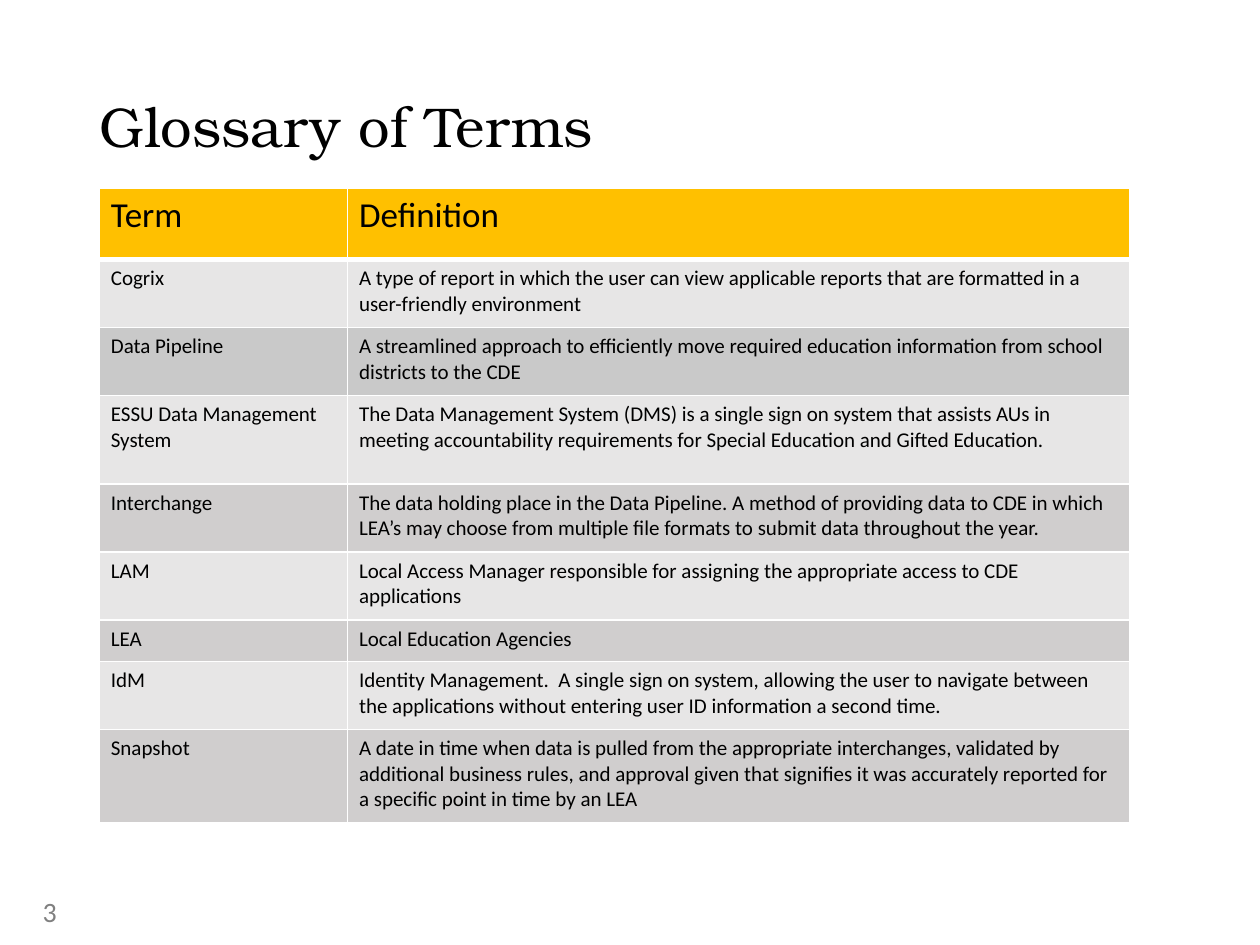
from lxml import etree
from pptx import Presentation
from pptx.dml.color import RGBColor
from pptx.enum import text
from pptx.oxml import ns
from pptx.util import Inches, Pt

BLACK = RGBColor(0, 0, 0)
GRAY = RGBColor(0x80, 0x80, 0x80)
GOLD = RGBColor(0xFF, 0xC0, 0x00)
LIGHT = RGBColor(0xE7, 0xE6, 0xE6)
MEDIUM = RGBColor(0xD0, 0xCE, 0xCE)
DARK = RGBColor(0xC9, 0xC9, 0xC9)
WHITE = RGBColor(0xFF, 0xFF, 0xFF)

TITLE = "Glossary of Terms"
PAGE_NUMBER = "3"
COLUMN_WIDTHS = (1.97, 6.21)
GLOSSARY = [
    ("Term", "Definition", 0.57, GOLD),
    ("Cogrix", "A type of report in which the user can view applicable reports that are "
     "formatted in a user-friendly environment", 0.54, LIGHT),
    ("Data Pipeline", "A streamlined approach to efficiently move required education "
     "information from school districts to the CDE", 0.54, DARK),
    ("ESSU Data Management System", "The Data Management System (DMS) is a single sign on "
     "system that assists AUs in meeting accountability requirements for Special Education "
     "and Gifted Education.", 0.7, LIGHT),
    ("Interchange", "The data holding place in the Data Pipeline. A method of providing data "
     "to CDE in which LEA’s may choose from multiple file formats to submit data throughout "
     "the year.", 0.54, MEDIUM),
    ("LAM", "Local Access Manager responsible for assigning the appropriate access to CDE "
     "applications", 0.54, LIGHT),
    ("LEA", "Local Education Agencies", 0.33, MEDIUM),
    ("IdM", "Identity Management.  A single sign on system, allowing the user to navigate "
     "between the applications without entering user ID information a second time.",
     0.54, LIGHT),
    ("Snapshot", "A date in time when data is pulled from the appropriate interchanges, "
     "validated by additional business rules, and approval given that signifies it was "
     "accurately reported for a specific point in time by an LEA", 0.74, MEDIUM),
]


def style(para, font_name, size, color):
    for span in para.runs:
        span.font.name = font_name
        span.font.size = Pt(size)
        span.font.bold = False
        span.font.color.rgb = color


def add_label(page, words, place, font_name, size, color):
    box = page.shapes.add_textbox(*map(Inches, place))
    frame = box.text_frame
    frame.word_wrap = True
    frame.vertical_anchor = text.MSO_ANCHOR.MIDDLE
    frame.text = words
    style(frame.paragraphs[0], font_name, size, color)
    return frame.paragraphs[0]


def set_borders(cell, widths):
    properties = cell._tc.get_or_add_tcPr()
    for index, (side, width) in enumerate(widths.items()):
        line = etree.Element(ns.qn(f"a:{side}"), w=str(Pt(width)))
        fill = etree.SubElement(line, ns.qn("a:solidFill"))
        etree.SubElement(fill, ns.qn("a:srgbClr"), val=str(WHITE))
        properties.insert(index, line)


def add_glossary(page):
    height = sum(entry[2] for entry in GLOSSARY)
    place = (0.79, 1.49, sum(COLUMN_WIDTHS), height)
    table = page.shapes.add_table(
        len(GLOSSARY), len(COLUMN_WIDTHS), *map(Inches, place)).table
    for column, width in zip(table.columns, COLUMN_WIDTHS):
        column.width = Inches(width)
    for index, (term, definition, row_height, color) in enumerate(GLOSSARY):
        row = table.rows[index]
        row.height = Inches(row_height)
        for cell, words in zip(row.cells, (term, definition)):
            cell.margin_left = cell.margin_right = Inches(0.09)
            cell.margin_top = cell.margin_bottom = Inches(0.05)
            cell.fill.solid()
            cell.fill.fore_color.rgb = color
            cell.text_frame.text = words
            style(cell.text_frame.paragraphs[0], "Calibri", 12 if index else 20, BLACK)
            set_borders(cell, {"lnL": 1, "lnR": 1, "lnT": 3 if index == 1 else 1,
                               "lnB": 1 if index else 3})


def main():
    deck = Presentation()
    deck.slide_width, deck.slide_height = Inches(10), Inches(7.5)
    page = deck.slides.add_slide(deck.slide_layouts[6])
    title = add_label(page, TITLE, (0.69, 0.2, 8.62, 1.65), "TeX Gyre Bonum", 32, BLACK)
    title.line_spacing = 0.9
    add_glossary(page)
    add_label(page, PAGE_NUMBER, (0.24, 7.03, 2.25, 0.4), "Calibri", 16, GRAY)
    deck.save("out.pptx")


if __name__ == "__main__":
    main()
